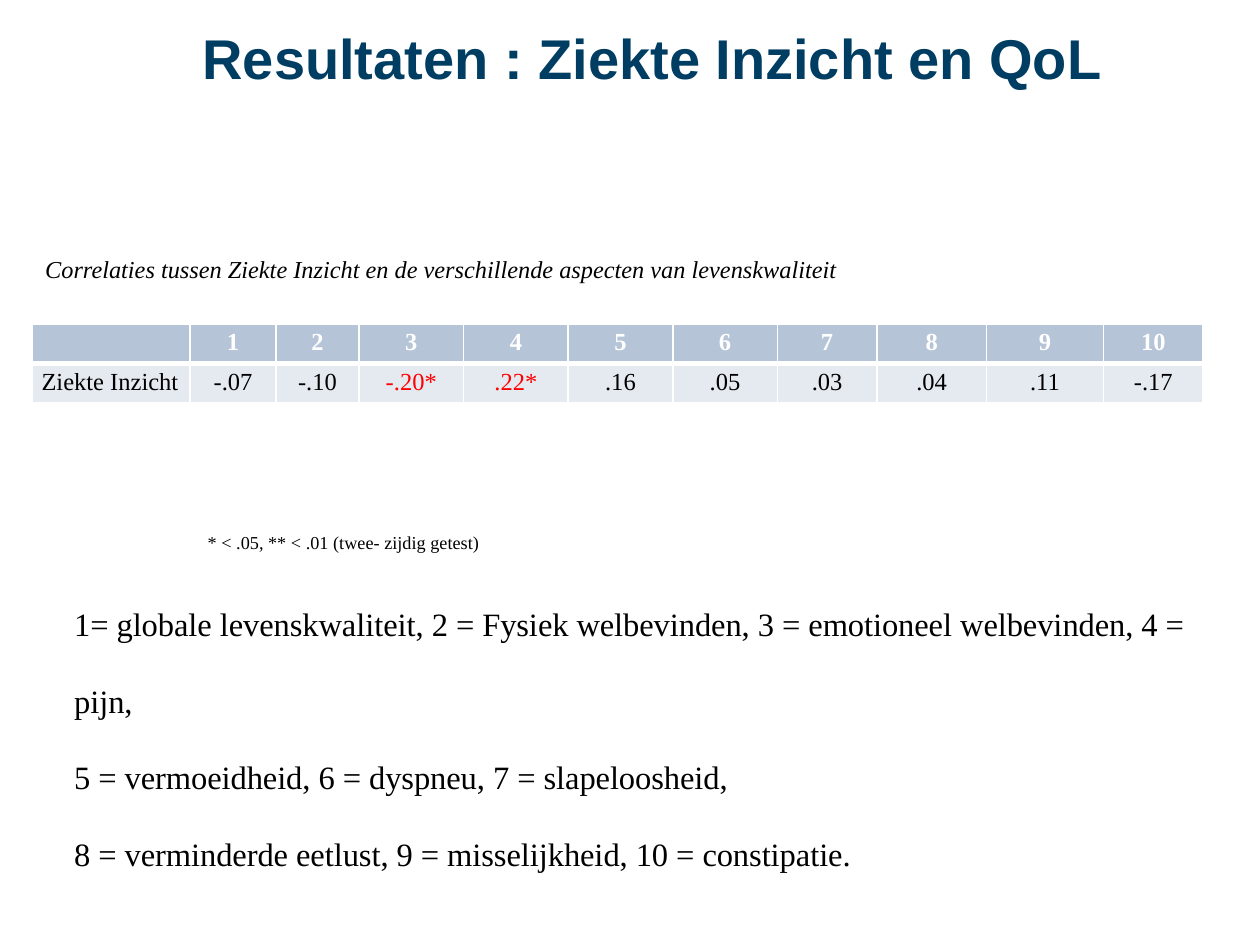
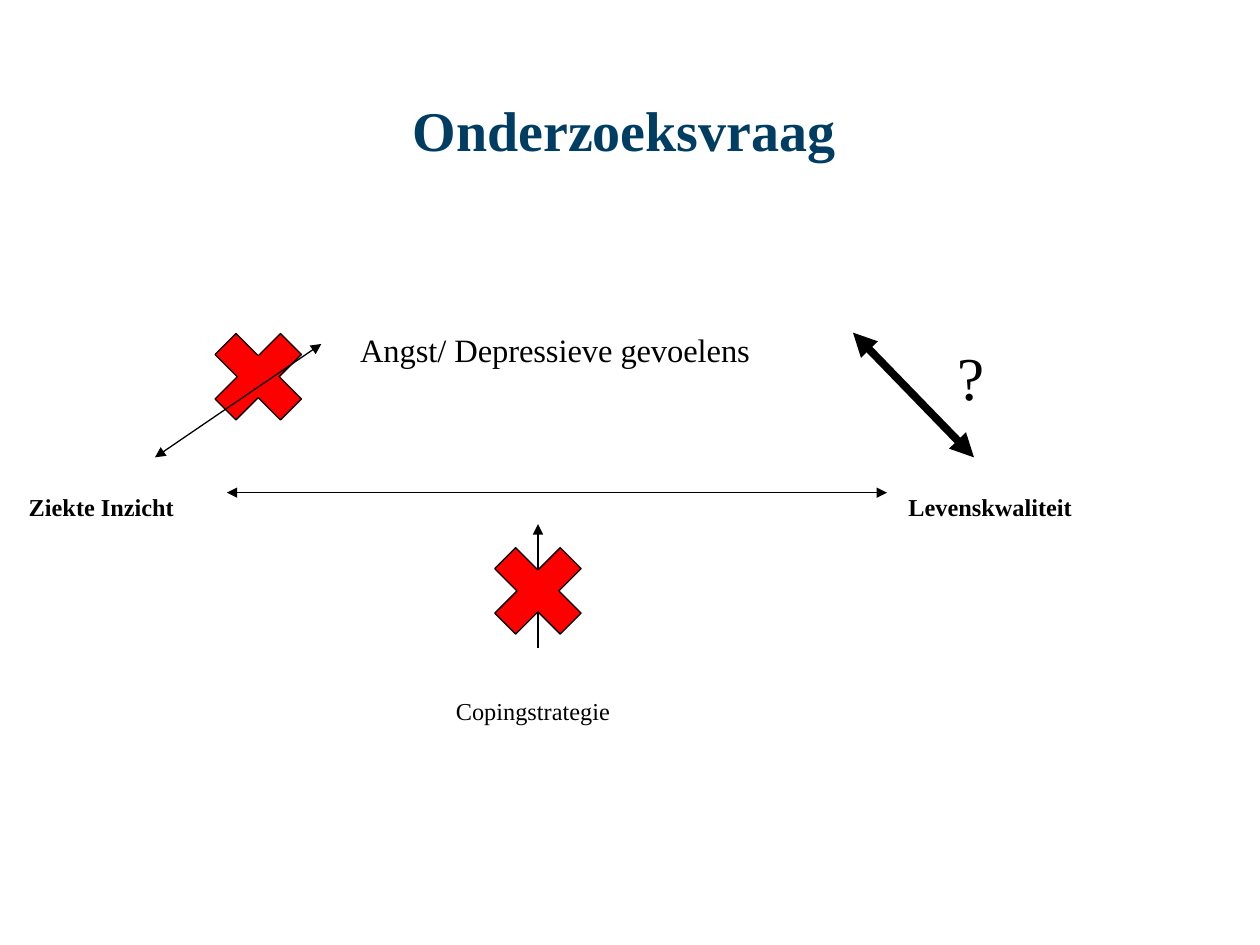
from dataclasses import dataclass

from lxml import etree
from pptx import Presentation
from pptx.dml.color import RGBColor
from pptx.enum.shapes import MSO_CONNECTOR, MSO_SHAPE
from pptx.enum.text import MSO_ANCHOR, PP_ALIGN
from pptx.oxml.ns import qn
from pptx.util import Inches, Pt

NAVY = RGBColor(0x00, 0x3D, 0x62)
BLACK = RGBColor(0x00, 0x00, 0x00)
WHITE = RGBColor(0xFF, 0xFF, 0xFF)
RED = RGBColor(0xFF, 0x00, 0x00)
HEADER_BLUE = RGBColor(0xB6, 0xC4, 0xD8)
ROW_BLUE = RGBColor(0xE5, 0xEA, 0xF0)

SERIF = "Times New Roman"
SANS = "Arial"

STRAIGHT = MSO_CONNECTOR.STRAIGHT
CROSS = MSO_SHAPE.MATH_MULTIPLY
LEFT, CENTER = PP_ALIGN.LEFT, PP_ALIGN.CENTER
MIDDLE = MSO_ANCHOR.MIDDLE

SUBSCRIPT = "-25000"
THIN, THICK = 1, 3


@dataclass
class Label:
    """Lowered serif text; the box is in inches."""
    text: str
    left: float
    top: float
    width: float
    height: float
    size: int
    bold: bool = False
    italic: bool = False
    inset_left: float = 0.1
    inset_top: float = 0.05


@dataclass
class Arrow:
    start: tuple[float, float]
    end: tuple[float, float]
    weight: float = 0.75
    two_way: bool = True


# Correlation table
COLUMN_WIDTHS = [1.25, 0.68, 0.66, 0.83, 0.83, 0.83, 0.83, 0.79, 0.87, 0.93, 0.79]
ROW_HEIGHT = 0.3
ASPECTS = [""] + [str(number) for number in range(1, 11)]
CORRELATIONS = ["Ziekte Inzicht", "-.07", "-.10", "-.20*", ".22*", ".16",
                ".05", ".03", ".04", ".11", "-.17"]

RESULT_LABELS = [
    Label("1= globale levenskwaliteit, 2 = Fysiek welbevinden, "
          "3 = emotioneel welbevinden, 4 = pijn,\n"
          "5 = vermoeidheid, 6 = dyspneu, 7 = slapeloosheid,\n"
          "8 = verminderde eetlust, 9 = misselijkheid, 10 = constipatie.",
          0.49, 4.45, 9.38, 1.74, 32),
    Label("* < .05, ** < .01 (twee- zijdig getest)", 1.55, 4, 2.71, 0.3, 18),
    Label("Correlaties tussen Ziekte Inzicht en de verschillende aspecten "
          "van levenskwaliteit",
          0.26, 1.5, 8.19, 0.54, 24, italic=True, inset_top=0.29),
]

# Research model
MODEL_LABELS = [
    Label("Ziekte Inzicht", 0.13, 3.63, 2.2, 0.37, 24, bold=True),
    Label("Levenskwaliteit", 6.88, 3.63, 1.99, 0.37, 24, bold=True, inset_left=0.33),
    Label("Angst/ Depressieve gevoelens", 2.76, 2.27, 3.81, 0.46, 32),
    Label("Copingstrategie", 3.52, 5.25, 1.63, 0.37, 24),
    Label("?", 7.5, 2.09, 0.45, 0.77, 60),
]
MODEL_ARROWS = [
    Arrow((1.23, 3.63), (2.55, 2.73)),
    Arrow((1.8, 3.91), (7.04, 3.91)),
    Arrow((6.77, 2.64), (7.73, 3.63), weight=4.5),
    Arrow((4.27, 5.14), (4.27, 4.16), two_way=False),
]
ANXIETY_CROSS = (1.55, 2.49)
COPING_CROSS = (3.77, 4.19)


def style_font(font, name: str, size: int, color: RGBColor,
               bold: bool = False, italic: bool = False) -> None:
    font.name, font.size = name, Pt(size)
    font.bold, font.italic = bold, italic
    font.color.rgb = color


def add_title(slide, text: str, box: tuple[float, float, float, float],
              font_name: str) -> None:
    frame = slide.shapes.add_textbox(*map(Inches, box)).text_frame
    frame.word_wrap = True
    frame.vertical_anchor = MIDDLE
    frame.margin_left = frame.margin_top = frame.margin_right = frame.margin_bottom = 0
    frame.text = text
    heading = frame.paragraphs[0]
    heading.alignment = CENTER
    style_font(heading.runs[0].font, font_name, 32, NAVY, bold=True)


def add_label(slide, label: Label) -> None:
    frame = slide.shapes.add_textbox(
        Inches(label.left), Inches(label.top),
        Inches(label.width), Inches(label.height)).text_frame
    frame.word_wrap = True
    frame.margin_left = Inches(label.inset_left)
    frame.margin_top = Inches(label.inset_top)
    frame.text = label.text
    for paragraph in frame.paragraphs:
        for run in paragraph.runs:
            style_font(run.font, SERIF, label.size, BLACK, label.bold, label.italic)
            run._r.get_or_add_rPr().set("baseline", SUBSCRIPT)


def add_arrow(slide, arrow: Arrow) -> None:
    connector = slide.shapes.add_connector(
        STRAIGHT, *map(Inches, arrow.start + arrow.end))
    connector.line.color.rgb = BLACK
    connector.line.width = Pt(arrow.weight)
    line = connector.line._get_or_add_ln()
    for tip in ("a:headEnd", "a:tailEnd") if arrow.two_way else ("a:tailEnd",):
        etree.SubElement(line, qn(tip), type="triangle")
    etree.SubElement(connector._element.spPr, qn("a:effectLst"))


def add_cross(slide, corner: tuple[float, float]) -> None:
    cross = slide.shapes.add_shape(CROSS, *map(Inches, corner), Inches(1), Inches(1))
    cross.shadow.inherit = False
    cross.fill.solid()
    cross.fill.fore_color.rgb = RED
    cross.line.color.rgb = BLACK
    cross.line.width = Pt(0.75)


def set_borders(cell, top: int, bottom: int) -> None:
    weights = {"a:lnL": THIN, "a:lnR": THIN, "a:lnT": top, "a:lnB": bottom}
    properties = cell._tc.get_or_add_tcPr()
    for edge, weight in weights.items():
        line = etree.SubElement(properties, qn(edge), w=str(Pt(weight)))
        fill = etree.SubElement(line, qn("a:solidFill"))
        etree.SubElement(fill, qn("a:srgbClr"), val=str(WHITE))


def fill_cell(cell, text: str, is_header: bool, alignment: PP_ALIGN) -> None:
    set_borders(cell, *((THIN, THICK) if is_header else (THICK, THIN)))
    cell.fill.solid()
    cell.fill.fore_color.rgb = HEADER_BLUE if is_header else ROW_BLUE
    cell.margin_left = cell.margin_right = Inches(0.07)
    cell.margin_top = cell.margin_bottom = Inches(0.04)
    cell.text = text
    paragraph = cell.text_frame.paragraphs[0]
    paragraph.alignment = alignment
    significant = text.endswith("*")
    color = WHITE if is_header else RED if significant else BLACK
    style_font(paragraph.font, SERIF, 14, color, bold=is_header)
    for run in paragraph.runs:
        style_font(run.font, SERIF, 14, color, bold=is_header)


def add_correlations(slide) -> None:
    rows = [ASPECTS, CORRELATIONS]
    table = slide.shapes.add_table(
        len(rows), len(ASPECTS), Inches(0.26), Inches(2.57),
        Inches(sum(COLUMN_WIDTHS)), Inches(ROW_HEIGHT * len(rows))).table
    for column, width in zip(table.columns, COLUMN_WIDTHS):
        column.width = Inches(width)
    for row_index, values in enumerate(rows):
        table.rows[row_index].height = Inches(ROW_HEIGHT)
        for column_index, value in enumerate(values):
            fill_cell(table.cell(row_index, column_index), value,
                      row_index == 0, CENTER if column_index else LEFT)


def build_results(slide) -> None:
    add_title(slide, "Resultaten : Ziekte Inzicht en QoL", (0.87, 0.18, 8.62, 0.54), SANS)
    add_correlations(slide)
    for label in RESULT_LABELS:
        add_label(slide, label)


def build_model(slide) -> None:
    add_title(slide, "Onderzoeksvraag", (0.71, 0.56, 8.49, 0.93), SERIF)
    for label in MODEL_LABELS:
        add_label(slide, label)
    # One cross lies under its arrow, the other covers it
    add_cross(slide, ANXIETY_CROSS)
    for arrow in MODEL_ARROWS:
        add_arrow(slide, arrow)
    add_cross(slide, COPING_CROSS)


def main() -> None:
    deck = Presentation()
    deck.slide_width, deck.slide_height = Inches(10), Inches(7.5)
    blank = deck.slide_layouts[6]
    for build in (build_results, build_model):
        build(deck.slides.add_slide(blank))
    deck.save("out.pptx")


if __name__ == "__main__":
    main()
